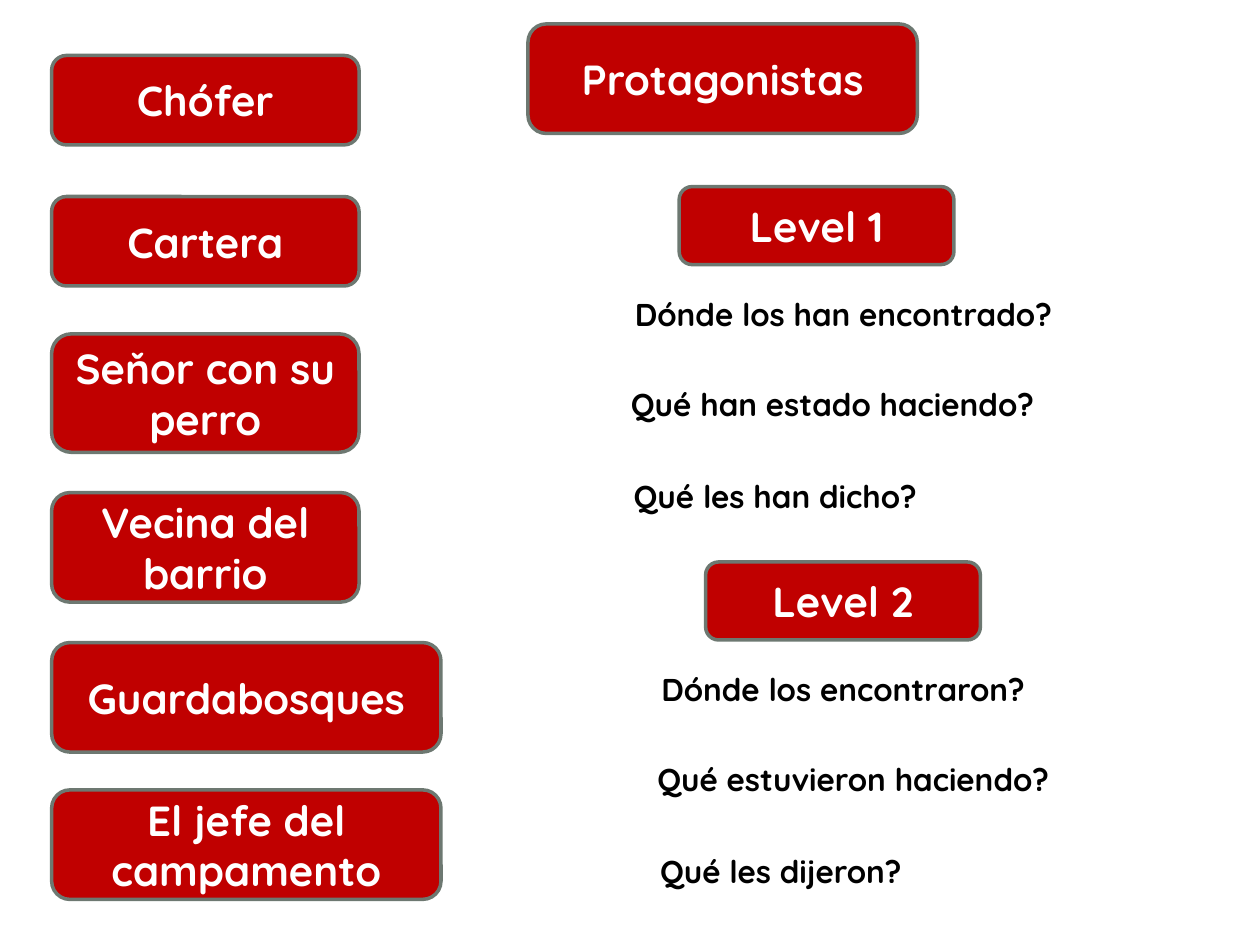
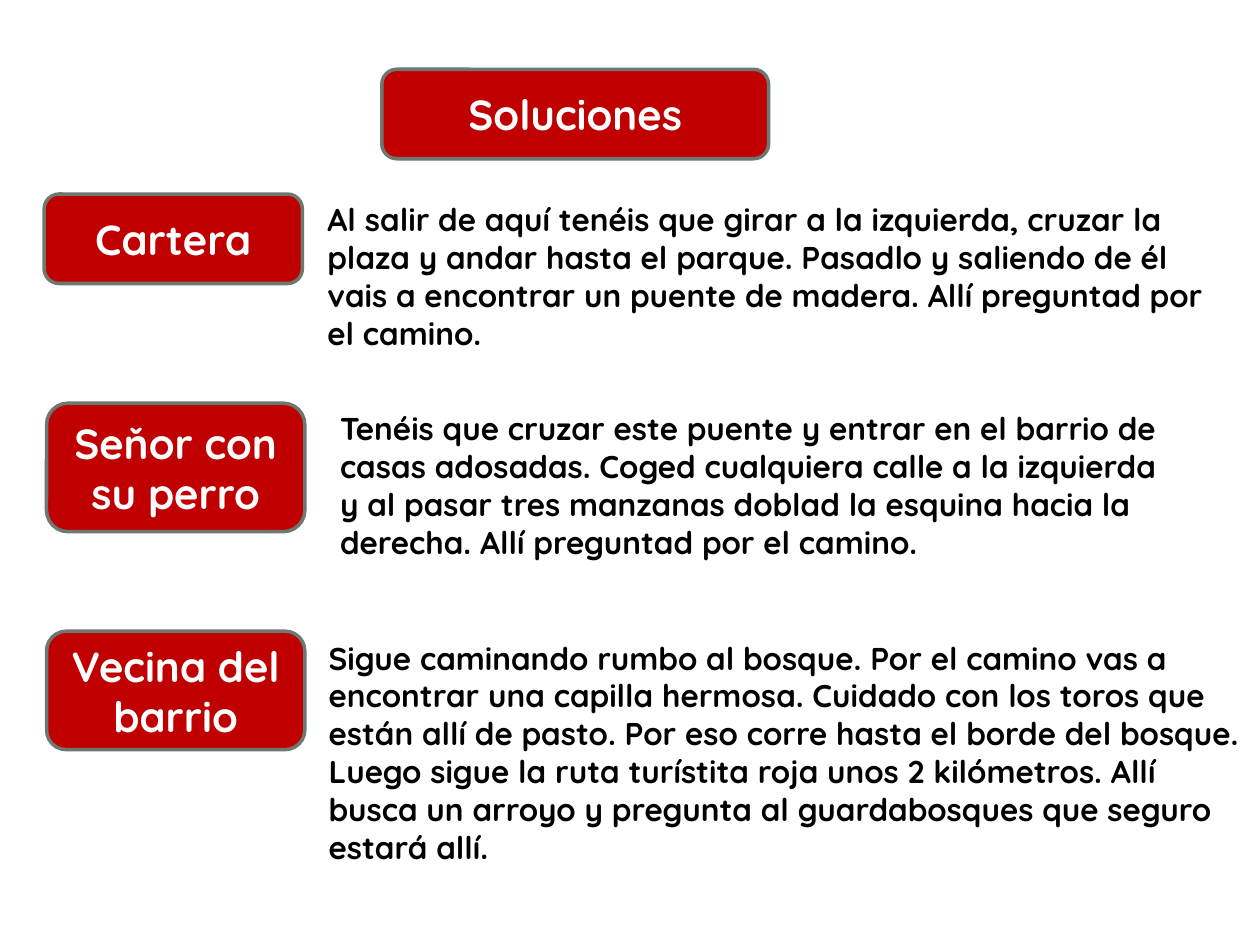
from pptx import Presentation
from pptx.dml.color import RGBColor
from pptx.enum import shapes, text
from pptx.util import Pt

RED = RGBColor(0xC0, 0x00, 0x00)
GREY = RGBColor(0x6D, 0x78, 0x71)
WHITE = RGBColor(0xFF, 0xFF, 0xFF)
BLACK = RGBColor(0x00, 0x00, 0x00)
FONT = "Quicksand"
LABEL_SIZE = 24
BODY_SIZE = 18
TITLE_ONLY = 5


class Worksheet:
    def __init__(self, width, height):
        self.deck = Presentation()
        self.deck.slide_width = Pt(width)
        self.deck.slide_height = Pt(height)
        self.slide = None

    def new_slide(self):
        layout = self.deck.slide_layouts[TITLE_ONLY]
        self.slide = self.deck.slides.add_slide(layout)

    def set_wording(self, frame, wording, size, color, align):
        frame.text = wording
        for paragraph in frame.paragraphs:
            paragraph.alignment = align
            for run in paragraph.runs:
                run.font.name = FONT
                run.font.size = Pt(size)
                run.font.bold = True
                run.font.color.rgb = color

    def set_label(self, frame, wording):
        self.set_wording(frame, wording, LABEL_SIZE, WHITE,
                         text.PP_ALIGN.CENTER)
        frame.vertical_anchor = text.MSO_ANCHOR.MIDDLE
        frame.auto_size = text.MSO_AUTO_SIZE.NONE
        frame.word_wrap = True

    def card(self, left, top, width, height):
        plate = self.slide.shapes.add_shape(
            shapes.MSO_SHAPE.ROUNDED_RECTANGLE,
            Pt(left), Pt(top), Pt(width), Pt(height))
        plate.shadow.inherit = False
        plate.fill.solid()
        plate.fill.fore_color.rgb = RED
        plate.line.color.rgb = GREY
        plate.line.width = Pt(2)
        return plate

    def label(self, wording, left, top, width, height):
        plate = self.card(left, top, width, height)
        self.set_label(plate.text_frame, wording)

    def title(self, wording, left, top, width, height):
        plate = self.card(left, top, width, height)
        heading = self.slide.shapes.title
        heading.left, heading.top = plate.left, plate.top
        heading.width, heading.height = plate.width, plate.height
        self.set_label(heading.text_frame, wording)
        plate.element.addnext(heading.element)

    def passage(self, wording, left, top, width, height, wrap=False):
        box = self.slide.shapes.add_textbox(
            Pt(left), Pt(top), Pt(width), Pt(height))
        self.set_wording(box.text_frame, wording, BODY_SIZE, BLACK,
                         text.PP_ALIGN.LEFT)
        box.text_frame.word_wrap = wrap
        box.text_frame.auto_size = text.MSO_AUTO_SIZE.SHAPE_TO_FIT_TEXT


CHARACTERS = [
    ("Chófer", 31.7, 175.7, 51.1),
    ("Cartera", 112.3, 175.7, 51.1),
    ("Seňor con su perro", 190.8, 175.7, 67.7),
    ("Vecina del barrio", 281.5, 175.7, 62.6),
    ("Guardabosques", 367.2, 222.5, 62.6),
    ("El jefe del campamento", 451.4, 222.5, 62.6),
]

LEVELS = [
    ("Level 1", 388.1, 106.6, [
        ("Dónde los han encontrado?", 260),
        ("Qué han estado haciendo?", 257),
        ("Qué les han dicho?", 185.8)]),
    ("Level 2", 403.2, 321.1, [
        ("Dónde los encontraron?", 225.4),
        ("Qué estuvieron haciendo?", 247.7),
        ("Qué les dijeron?", 157.7)]),
]
QUESTION_OFFSETS = [(-32.4, 58.3), (-34.6, 109.8), (-33.1, 162.4)]

SOLUTIONS = [
    ("Cartera", (25.2, 110.9, 147.6, 51.1),
     ["Al salir de aquí tenéis que girar a la izquierda, cruzar la plaza "
      "y andar hasta el parque. Pasadlo y saliendo de él vais a encontrar "
      "un puente de madera. Allí preguntad por el camino."],
     (180, 110.9, 514.8, 94.3), True),
    ("Seňor con su perro", (26.6, 230.4, 147.6, 73.4),
     ["Tenéis que cruzar este puente y entrar en el barrio de",
      "casas adosadas. Coged cualquiera calle a la izquierda",
      "y al pasar tres manzanas doblad la esquina hacia la",
      "derecha. Allí preguntad por el camino."],
     (187.2, 230.4, 504.7, 94.3), False),
    ("Vecina del barrio", (26.6, 360.7, 147.6, 67.7),
     ["Sigue caminando rumbo al bosque. Por el camino vas a",
      "encontrar una capilla hermosa. Cuidado con los toros que",
      "están allí de pasto. Por eso corre hasta el borde del bosque.",
      "Luego sigue la ruta turístita roja unos 2 kilómetros. Allí",
      "busca un arroyo y pregunta al guardabosques que seguro",
      "estará allí."],
     (180.7, 361.4, 542.2, 138.2), False),
]


def protagonists(sheet):
    sheet.new_slide()
    sheet.title("Protagonistas", 301.7, 13.7, 222.5, 62.6)
    for character, top, width, height in CHARACTERS:
        sheet.label(character, 29.5, top, width, height)
    for level, left, top, questions in LEVELS:
        sheet.label(level, left, top, 157, 44.6)
        for (question, width), (dx, dy) in zip(questions, QUESTION_OFFSETS):
            sheet.passage(question, left + dx, top + dy, width, 28.8)


def solutions(sheet):
    sheet.new_slide()
    sheet.title("Soluciones", 218.2, 39.6, 221, 51.1)
    for character, label_area, lines, answer_area, wrap in SOLUTIONS:
        sheet.label(character, *label_area)
        sheet.passage("\n".join(lines), *answer_area, wrap=wrap)


def main():
    sheet = Worksheet(720, 540)
    protagonists(sheet)
    solutions(sheet)
    sheet.deck.save("out.pptx")


if __name__ == "__main__":
    main()
